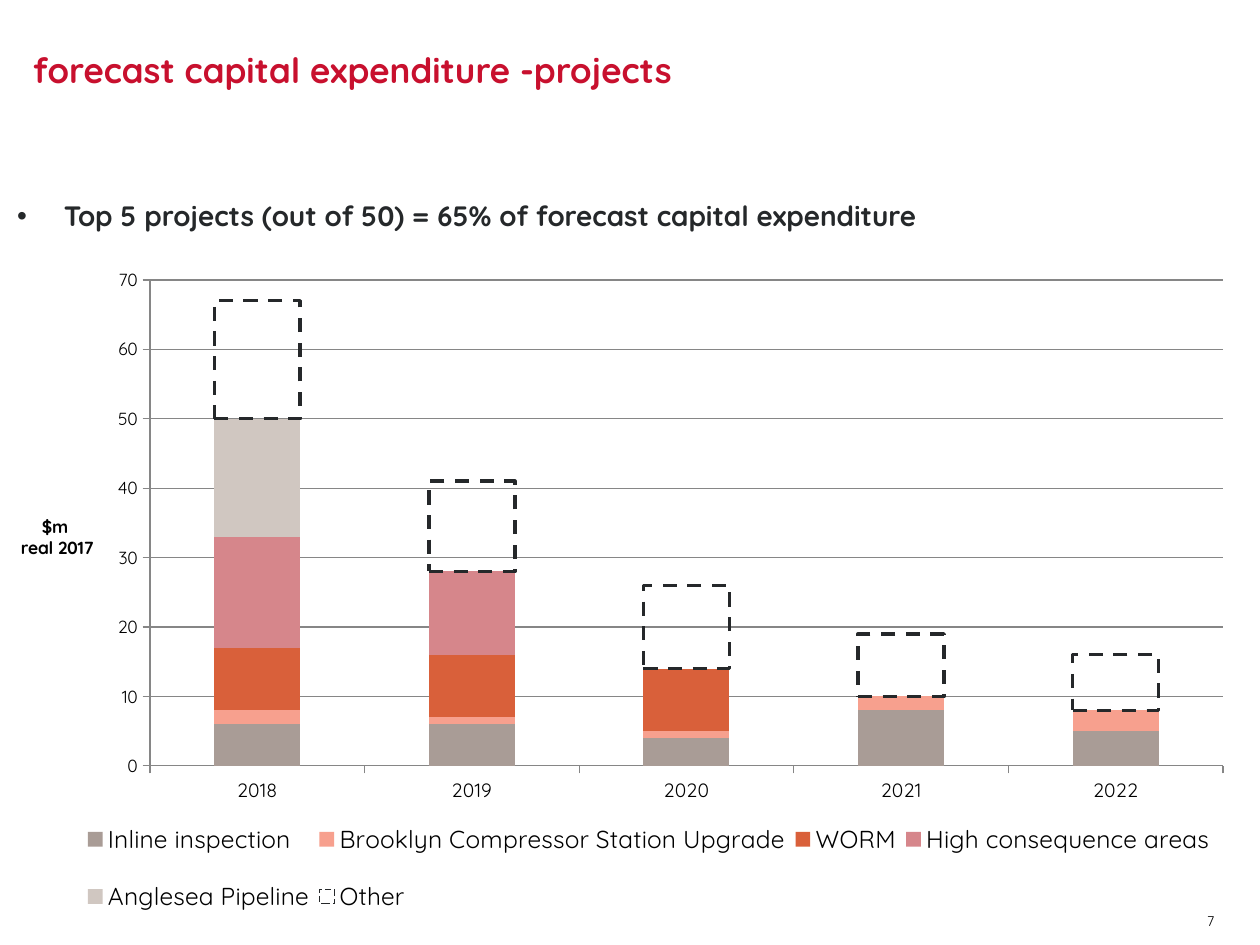
import pptx
import pptx.chart.data
import pptx.dml.color
import pptx.enum.chart
import pptx.enum.dml
import pptx.enum.shapes
import pptx.enum.text
import pptx.oxml
import pptx.oxml.ns
import pptx.util

PX = 914400 / 126
FONT = "Quicksand"
COLORS = {
    "white": "FFFFFF",
    "title": "C8102E",
    "text": "25282A",
    "black": "000000",
    "grid": "868686",
    "inspection": "A99C96",
    "brooklyn": "F7A08E",
    "worm": "D9603A",
    "consequence": "D6868B",
    "anglesea": "D0C7C1",
}
YEARS = ["2018", "2019", "2020", "2021", "2022"]
PROJECTS = [
    ("Inline inspection", (6, 6, 4, 8, 5), "inspection"),
    ("Brooklyn Compressor Station Upgrade", (2, 1, 1, 2, 3), "brooklyn"),
    ("WORM", (9, 9, 9, 0, 0), "worm"),
    ("High consequence areas", (16, 12, 0, 0, 0), "consequence"),
    ("Anglesea Pipeline", (17, None, None, None, None), "anglesea"),
    ("Other", (17, 13, 12, 9, 8), None),
]


def px(length):
    return pptx.util.Emu(round(length * PX))


def color(name):
    return pptx.dml.color.RGBColor.from_string(COLORS[name])


def format_font(font, size, color_name="black", bold=False):
    font.name = FONT
    font.size = pptx.util.Pt(size)
    font.bold = bold
    font.color.rgb = color(color_name)


def add_text(slide, box, text, size, color_name="black", bold=False, fill_name=None,
             anchor="TOP", inset=0, wrap=True, bullet_indent=0, line_spacing=None):
    if fill_name:
        shape = slide.shapes.add_shape(
            pptx.enum.shapes.MSO_SHAPE.RECTANGLE, *map(px, box))
        shape.shadow.inherit = False
        shape.fill.solid()
        shape.fill.fore_color.rgb = color(fill_name)
        shape.line.fill.background()
    else:
        shape = slide.shapes.add_textbox(*map(px, box))
    frame = shape.text_frame
    frame.word_wrap = wrap
    frame.vertical_anchor = getattr(pptx.enum.text.MSO_ANCHOR, anchor)
    frame.margin_left = frame.margin_right = px(inset)
    frame.margin_top = frame.margin_bottom = px(inset / 2)
    paragraph = frame.paragraphs[0]
    paragraph.alignment = pptx.enum.text.PP_ALIGN.LEFT
    run = paragraph.add_run()
    run.text = text
    if bullet_indent:
        properties = paragraph._p.get_or_add_pPr()
        properties.set("marL", str(px(bullet_indent)))
        properties.set("indent", str(-px(bullet_indent)))
        for bullet in ('buFont {} typeface="Arial"', 'buChar {} char="•"'):
            tag = bullet.format(pptx.oxml.ns.nsdecls("a"))
            properties.append(pptx.oxml.parse_xml(f"<a:{tag}/>"))
    if line_spacing:
        paragraph.line_spacing = line_spacing
    format_font(run.font, size, color_name, bold)


def set_layout(element, index, chart_box, x, y, width=None, height=None, inner=False):
    """Place a chart part by px lengths measured from the chart's corner."""
    for layout in element.findall(pptx.oxml.ns.qn("c:layout")):
        element.remove(layout)
    chart_width, chart_height = chart_box[2:]
    values = [("xMode", "edge"), ("yMode", "edge"),
              ("x", x / chart_width), ("y", y / chart_height)]
    if inner:
        values.insert(0, ("layoutTarget", "inner"))
    if width:
        values += [("w", width / chart_width), ("h", height / chart_height)]
    content = "".join(f'<c:{tag} val="{value}"/>' for tag, value in values)
    element.insert(index, pptx.oxml.parse_xml(
        f'<c:layout {pptx.oxml.ns.nsdecls("c")}>'
        f"<c:manualLayout>{content}</c:manualLayout></c:layout>"))


def format_line(line, color_name, width):
    line.color.rgb = color(color_name)
    line.width = pptx.util.Pt(width)


def format_axes(chart, chart_box):
    for axis, size in ((chart.category_axis, 11), (chart.value_axis, 10)):
        axis.major_tick_mark = pptx.enum.chart.XL_TICK_MARK.OUTSIDE
        axis.minor_tick_mark = pptx.enum.chart.XL_TICK_MARK.NONE
        format_line(axis.format.line, "grid", 0.75)
        format_font(axis.tick_labels.font, size)

    value_axis = chart.value_axis
    value_axis.minimum_scale = 0
    value_axis.maximum_scale = 70
    value_axis.major_unit = 10
    value_axis.has_major_gridlines = True
    format_line(value_axis.major_gridlines.format.line, "grid", 0.75)

    # Horizontal unit label beside the value axis
    title = value_axis.axis_title
    title.text_frame.text = "$m \nreal 2017"
    for paragraph in title.text_frame.paragraphs:
        paragraph.alignment = pptx.enum.text.PP_ALIGN.CENTER
        format_font(paragraph.runs[0].font, 10, bold=True)
    body = title.text_frame._txBody.bodyPr
    body.set("rot", "0")
    body.set("vert", "horz")
    set_layout(title._element, 1, chart_box, 0, 245)


def add_project_chart(slide, box):
    data = pptx.chart.data.CategoryChartData()
    data.categories = YEARS
    for name, values, _ in PROJECTS:
        data.add_series(name, values)
    chart = slide.shapes.add_chart(
        pptx.enum.chart.XL_CHART_TYPE.COLUMN_STACKED, *map(px, box), data).chart
    chart.has_title = False
    format_font(chart.font, 10)

    # Stacked columns, with the remaining projects as a dashed outline
    plot = chart.plots[0]
    plot.gap_width = 150
    plot.overlap = 100
    plot.vary_by_categories = False
    for series, (_, _, fill_name) in zip(plot.series, PROJECTS):
        series.invert_if_negative = False
        if fill_name:
            series.format.fill.solid()
            series.format.fill.fore_color.rgb = color(fill_name)
        else:
            series.format.fill.background()
            format_line(series.format.line, "text", 2)
            series.format.line.dash_style = pptx.enum.dml.MSO_LINE.DASH

    format_axes(chart, box)
    plot_area = chart._chartSpace.chart.plotArea
    set_layout(plot_area, 0, box, 133, 15, 1073, 486, inner=True)

    # Legend in two rows under the plot
    chart.has_legend = True
    legend = chart.legend
    legend.position = pptx.enum.chart.XL_LEGEND_POSITION.BOTTOM
    legend.include_in_layout = False
    format_font(legend.font, 14)
    set_layout(legend._element, 1, box, 61, 533, 1142, 140)


def add_header(slide, box):
    add_text(slide, box, "forecast capital expenditure -projects", 20,
             "title", bold=True, fill_name="white", anchor="BOTTOM")


def add_body(slide, box):
    left, top, width, height = box
    add_text(slide, box,
             "Top 5 projects (out of 50) = 65% of forecast capital expenditure",
             16, "text", bold=True, bullet_indent=47, line_spacing=1.5)
    add_project_chart(slide, (left, top + 83, width, height - 83))


def add_page_number(slide, box):
    add_text(slide, box, "7", 8, inset=13, wrap=False)


def main():
    presentation = pptx.Presentation()
    presentation.slide_width = px(1260)
    presentation.slide_height = px(945)
    slide = presentation.slides.add_slide(presentation.slide_layouts[6])
    add_body(slide, (17, 182, 1226, 763))
    add_header(slide, (33, 28, 946, 63))
    add_page_number(slide, (1194, 906, 43, 30))
    presentation.save("out.pptx")


if __name__ == "__main__":
    main()
